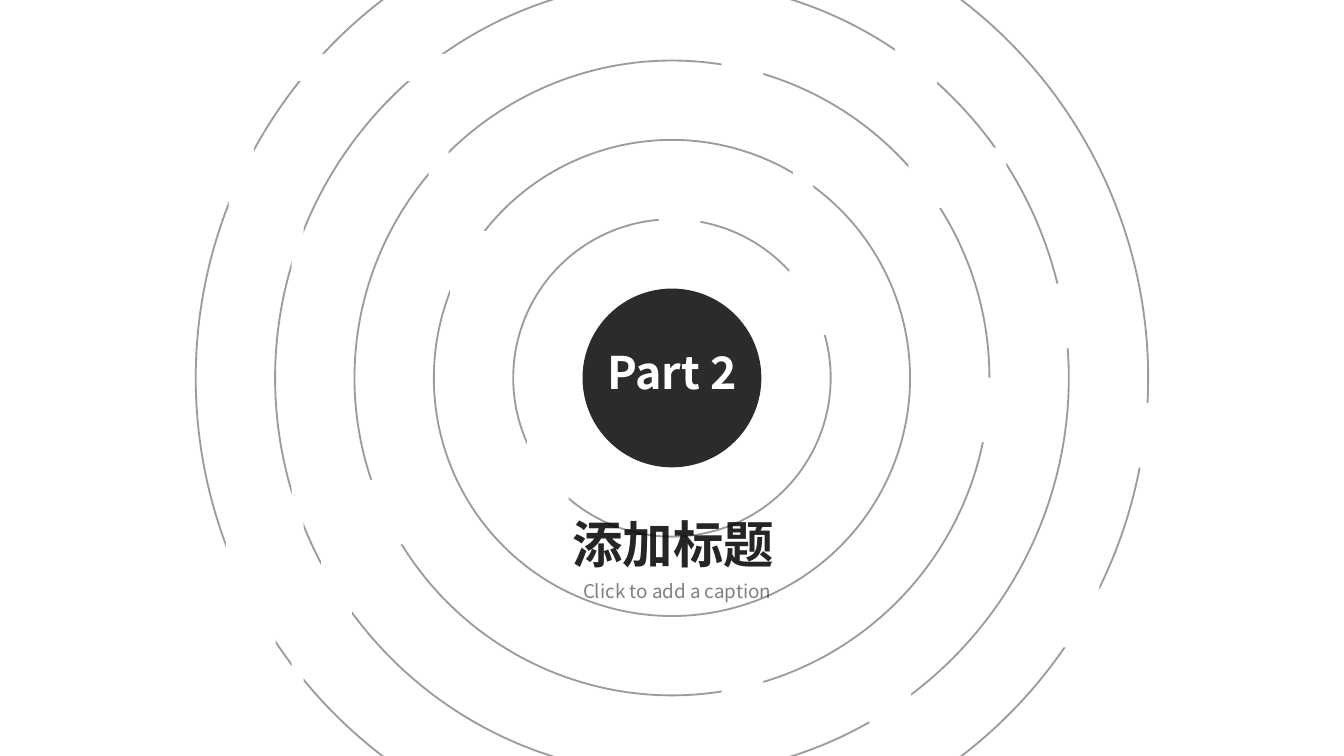
import dataclasses

import pptx
import pptx.dml.color
import pptx.enum.shapes
import pptx.enum.text
import pptx.oxml.ns
import pptx.util
from lxml import etree

Cm, Pt = pptx.util.Cm, pptx.util.Pt
SHAPE = pptx.enum.shapes.MSO_SHAPE
ALIGN = pptx.enum.text.PP_ALIGN
qn = pptx.oxml.ns.qn


@dataclasses.dataclass(frozen=True)
class Theme:
    font: str = "Noto Sans CJK SC"
    paper: str = "FFFFFF"
    disc: str = "2B2B2B"
    title: str = "252525"
    caption: str = "808080"
    ring: str = "000000"
    ring_opacity: int = 38
    ring_width: float = 1
    part_size: float = 24
    title_size: float = 27
    caption_size: float = 10.1


THEME = Theme()
WIDTH, HEIGHT = 25.4, 14.29

# White patches that break the rings: left, top in cm
GAP_SIZE = (0.79, 1.22)
GAPS = [
    (12.45, 3.71), (14.91, 5.11), (9.96, 8.33), (6.83, 9.07), (8.51, 4.37),
    (13.64, 0.66), (19.61, 5.36), (18.08, 7.14), (16.43, 12.67),
    (19.99, 11.02), (16.92, 0.53), (13.64, 12.07), (21.21, 7.62),
]
# Patches with a size of their own: left, top, width, height in cm
ODD_GAPS = [
    (6.07, 10.59, 0.58, 1.22), (4.32, 2.67, 0.48, 1.22),
    (8.1, 2.39, 0.38, 1.22), (14.99, 2.74, 0.38, 1.22),
    (4.27, 9.4, 0.94, 2.84), (5.51, 2.62, 0.23, 10.67),
    (5.49, 1.02, 3.89, 0.51), (17.17, 2.79, 1.85, 1.14),
]


def rgb(value):
    return pptx.dml.color.RGBColor.from_string(value)


def add_shape(shapes, kind, box, fill=None):
    sp = shapes.add_shape(kind, *map(Cm, box))
    sp.shadow.inherit = False
    sp.line.fill.background()
    if fill:
        sp.fill.solid()
        sp.fill.fore_color.rgb = rgb(fill)
    else:
        sp.fill.background()
    return sp


def add_text(shapes, box, text, size, color, bold=False, align=ALIGN.JUSTIFY,
             wrap=True):
    tf = shapes.add_textbox(*map(Cm, box)).text_frame
    tf.word_wrap = wrap
    tf.auto_size = pptx.enum.text.MSO_AUTO_SIZE.SHAPE_TO_FIT_TEXT
    p = tf.paragraphs[0]
    p.alignment = align
    p.line_spacing = 0.9
    r = p.add_run()
    r.text = text
    r.font.name = THEME.font
    r.font.size = Pt(size)
    r.font.bold = bold
    r.font.color.rgb = rgb(color)
    # East Asian typeface
    etree.SubElement(r.font._element, qn("a:ea"), typeface=THEME.font)


def centred(cx, cy, size):
    return cx - size / 2, cy - size / 2, size, size


def add_badge(s, box):
    """Dark disc with the part number."""
    left, top, width, height = box
    shapes = s.shapes.add_group_shape().shapes
    add_shape(shapes, SHAPE.OVAL, box, THEME.disc)
    add_text(shapes, (left + 0.22, top + 1.06, width - 0.2, 1.27), "Part 2",
             THEME.part_size, THEME.paper, bold=True)


def add_heading(s, box):
    """Title with its caption below."""
    left, top, width, height = box
    add_text(s.shapes, (left, top, width, 1.42), "添加标题",
             THEME.title_size, THEME.title, bold=True)
    add_text(s.shapes, (left + 0.2, top + height - 0.69, 4.29, 0.69),
             "Click to add a caption", THEME.caption_size, THEME.caption,
             align=ALIGN.LEFT, wrap=False)


def add_rings(s, box, count=5, inner=6):
    """Evenly spaced concentric rings, broken by white patches."""
    left, top, width, height = box
    shapes = s.shapes.add_group_shape().shapes
    step = (width - inner) / (count - 1)
    for i in range(count):
        ring = add_shape(shapes, SHAPE.OVAL, centred(
            left + width / 2, top + height / 2, inner + i * step))
        ring.line.color.rgb = rgb(THEME.ring)
        ring.line.width = Pt(THEME.ring_width)
        # Line transparency
        clr = ring.line._ln.find(".//" + qn("a:srgbClr"))
        etree.SubElement(clr, qn("a:alpha"),
                         val=str(THEME.ring_opacity * 1000))
    for gap in [g + GAP_SIZE for g in GAPS] + ODD_GAPS:
        add_shape(shapes, SHAPE.RECTANGLE, gap, THEME.paper)


def main():
    prs = pptx.Presentation()
    prs.slide_width, prs.slide_height = Cm(WIDTH), Cm(HEIGHT)
    s = prs.slides.add_slide(prs.slide_layouts[6])
    s.background.fill.solid()
    s.background.fill.fore_color.rgb = rgb(THEME.paper)

    cx, cy = WIDTH / 2, HEIGHT / 2
    add_badge(s, centred(cx, cy, 3.38))
    add_heading(s, (10.57, 9.7, 4.34, 1.88))
    add_rings(s, centred(cx, cy, 18))
    prs.save("out.pptx")


if __name__ == "__main__":
    main()
